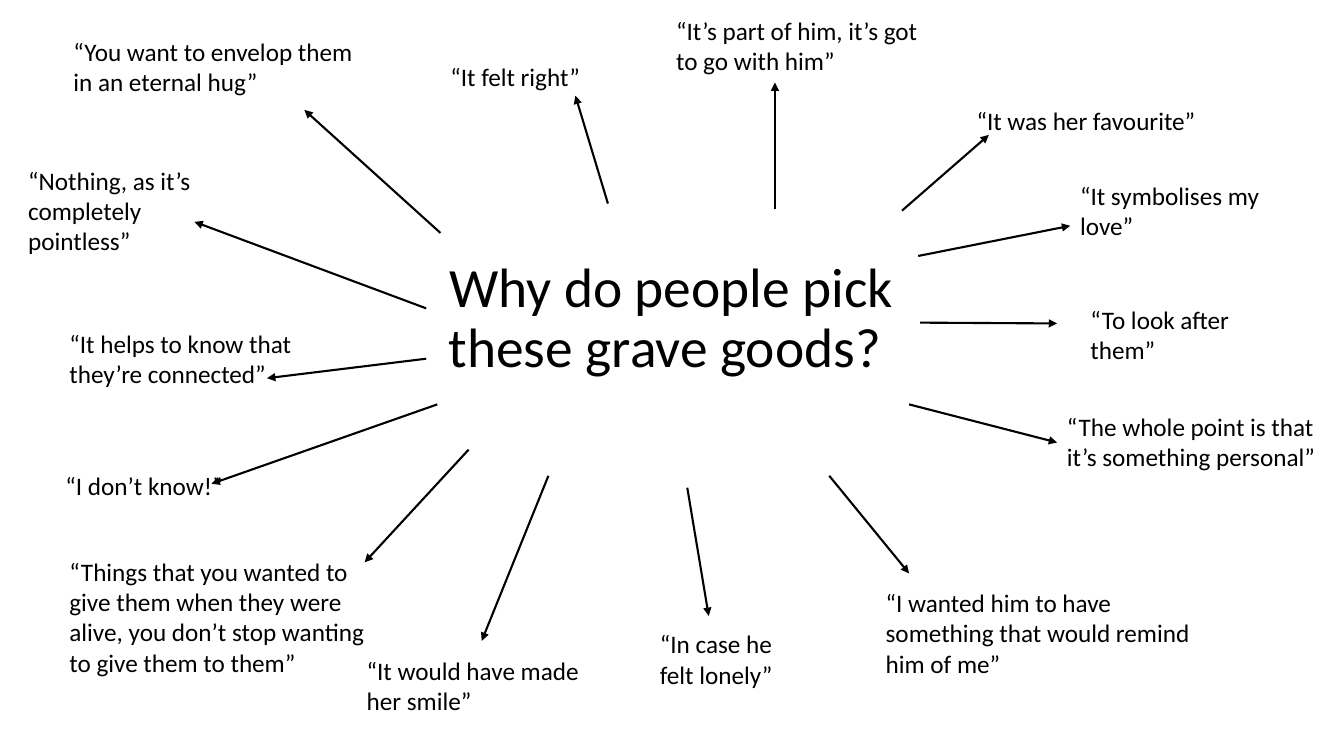
import copy

import pptx
import pptx.dml.color
import pptx.enum.shapes
import pptx.enum.text
import pptx.oxml
import pptx.oxml.ns
import pptx.util

Cm, Pt = pptx.util.Cm, pptx.util.Pt
INK = "000000"
FONT = "Calibri"

TITLE = "Why do people pick these grave goods? "
TITLE_BOX = (10.03, 7.04, 13.77, 3.68)

# Clockwise from the top left, in cm: text, box (left, top, width, height),
# arrow start, arrow tip
QUOTES = [
    ("“You want to envelop them in an eternal hug”",
     (1.6, 0.79, 7.7, 1.8), (11.1, 5.87), (7.67, 2.77)),
    ("“It felt right”",
     (11.1, 1.42, 6.4, 1.02), (15.32, 5.13), (14.5, 2.41)),
    ("“It’s part of him, it’s got to go with him”",
     (16.79, 0.25, 7.24, 1.8), (19.53, 5.26), (19.53, 2.08)),
    ("“It was her favourite”",
     (24.36, 2.54, 6.55, 1.02), (22.73, 5.31), (24.92, 3.4)),
    ("“It symbolises my love”",
     (26.97, 4.42, 6.38, 1.02), (23.14, 6.45), (26.97, 5.69)),
    ("“To look after them”",
     (27.23, 7.54, 5.51, 1.02), (23.19, 8.13), (26.64, 8.15)),
    ("“The whole point is that it’s something personal”",
     (26.64, 10.24, 6.86, 1.8), (22.91, 10.19), (26.64, 11.15)),
    ("“I wanted him to have something that would remind him of me”",
     (22.07, 14.68, 8.71, 1.8), (20.9, 11.99), (22.91, 14.45)),
    ("“In case he felt lonely”",
     (16.38, 15.72, 4.32, 1.8), (17.32, 12.29), (17.86, 15.52)),
    ("“It would have made her smile”",
     (8.99, 16.38, 6.32, 1.8), (13.82, 11.99), (12.14, 16.15)),
    ("“Things that you wanted to give them when they were alive, "
     "you don’t stop wanting to give them to them”",
     (1.5, 13.89, 7.95, 3.33), (11.81, 11.33), (9.19, 14.17)),
    ("“I don’t know!”",
     (1.4, 11.73, 9.17, 1.02), (11.02, 10.19), (5.33, 12.19)),
    ("“It helps to know that they’re connected”",
     (1.5, 8.15, 7.92, 1.8), (10.74, 9.04), (6.73, 9.53)),
    ("“Nothing, as it’s completely pointless”",
     (0.46, 4.04, 5.86, 1.8), (10.74, 7.77), (4.9, 5.59)),
]


def rgb(value):
    return pptx.dml.color.RGBColor.from_string(value)


def add_text(s, box, text, size):
    """Add a wrapping text box and return its text frame."""
    tf = s.shapes.add_textbox(*map(Cm, box)).text_frame
    tf.word_wrap = True
    r = tf.paragraphs[0].add_run()
    r.text = text
    r.font.name = FONT
    r.font.size = Pt(size)
    r.font.color.rgb = rgb(INK)
    return tf


def add_title(s, box):
    """Add the central question, closed by a line break at full size."""
    tf = add_text(s, box, TITLE, 39.6)
    tf.vertical_anchor = pptx.enum.text.MSO_ANCHOR.MIDDLE
    p = tf.paragraphs[0]
    p.alignment = pptx.enum.text.PP_ALIGN.CENTER
    p.line_spacing = 0.9
    p.add_line_break()
    props = p.runs[0]._r.rPr
    p._p[-1].append(copy.deepcopy(props))
    end = pptx.oxml.parse_xml(
        f'<a:endParaRPr {pptx.oxml.ns.nsdecls("a")} sz="{props.get("sz")}"/>')
    p._p.append(end)


def add_arrow(s, start, tip):
    line = s.shapes.add_connector(
        pptx.enum.shapes.MSO_CONNECTOR.STRAIGHT, *map(Cm, start + tip))
    line.line.color.rgb = rgb(INK)
    line.line.width = Pt(1.5)
    ns = pptx.oxml.ns.nsdecls("a")
    line.line._get_or_add_ln().append(
        pptx.oxml.parse_xml(f'<a:tailEnd {ns} type="triangle"/>'))
    line._element.spPr.append(pptx.oxml.parse_xml(f"<a:effectLst {ns}/>"))


def add_quote(s, box, text, start, tip):
    tf = add_text(s, box, text, 18)
    tf.auto_size = pptx.enum.text.MSO_AUTO_SIZE.SHAPE_TO_FIT_TEXT
    add_arrow(s, start, tip)


def main():
    prs = pptx.Presentation()
    prs.slide_width, prs.slide_height = Cm(33.87), Cm(19.05)
    s = prs.slides.add_slide(prs.slide_layouts[6])
    add_title(s, TITLE_BOX)
    for text, box, start, tip in QUOTES:
        add_quote(s, box, text, start, tip)
    prs.save("out.pptx")


if __name__ == "__main__":
    main()
